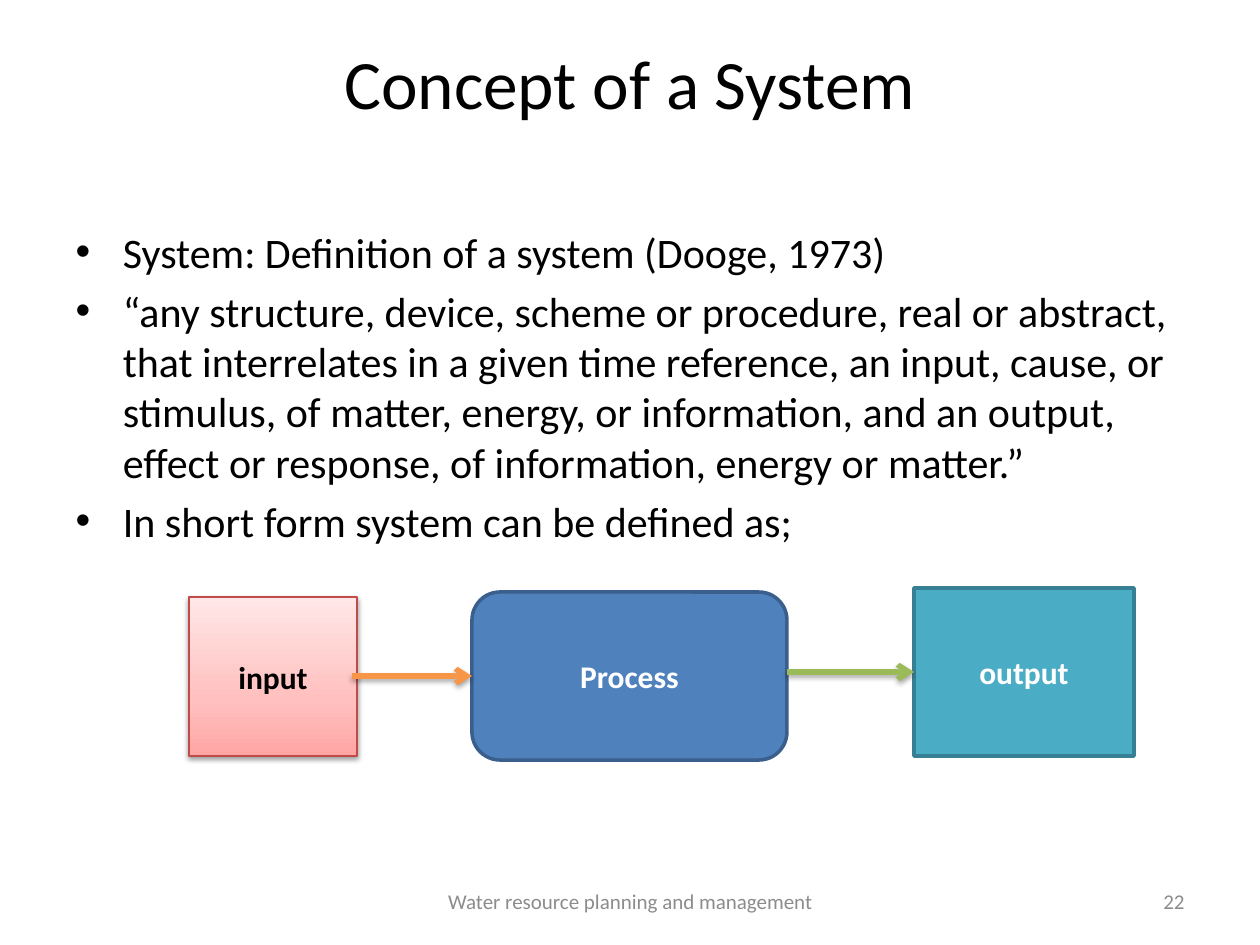
"""Build the slide that defines a system and shows input, process and output."""
from copy import deepcopy
from dataclasses import dataclass
from typing import NamedTuple, Optional

from lxml import etree
from pptx import Presentation
from pptx import util as u
from pptx.dml.color import RGBColor
from pptx.enum import shapes, text
from pptx.oxml import ns

EMU_PER_PX = 914400 / 126


@dataclass(frozen=True)
class Theme:
    font: str = "Calibri"
    ink: str = "000000"
    paper: str = "FFFFFF"
    muted: str = "8C8C8C"
    title_size: float = 39.6
    body_size: float = 24
    label_size: float = 18
    footer_size: float = 12
    edge_width: float = 2
    arrow_width: float = 3


class Area(NamedTuple):
    left: int
    top: int
    width: int
    height: int


class Stop(NamedTuple):
    position: float
    color: str


class Shadow(NamedTuple):
    opacity: int
    blur: float
    distance: float


@dataclass(frozen=True)
class Block:
    label: str
    area: Area
    fills: tuple[Stop, ...]
    edge: str
    ink: str = Theme.paper
    edge_width: float = Theme.edge_width
    kind: shapes.MSO_SHAPE = shapes.MSO_SHAPE.RECTANGLE
    shadow: Optional[Shadow] = None


class Arrow(NamedTuple):
    start: tuple[int, int]
    target: str
    color: str


THEME = Theme()
ARROW_SHADOW = Shadow(35, 3.1, 1.8)
TITLE_AREA = Area(63, 38, 1134, 88)
BODY_AREA = Area(63, 220, 1134, 662)
FOOTER_AREA = Area(431, 876, 399, 50)
NUMBER_AREA = Area(903, 876, 294, 50)
POINTS = [
    "System: Definition of a system (Dooge, 1973)",
    "“any structure, device, scheme or procedure, real or abstract, that interrelates "
    "in a given time reference, an input, cause, or stimulus, of matter, energy, or "
    "information, and an output, effect or response, of information, energy or matter.”",
    "In short form system can be defined as;",
]
BLOCKS = [
    Block("Process", Area(472, 592, 315, 168), (Stop(0, "4F81BD"),), "3A5F8C",
          kind=shapes.MSO_SHAPE.ROUNDED_RECTANGLE),
    Block("input", Area(189, 597, 168, 159),
          (Stop(0, "FFA6A5"), Stop(0.35, "FFC0BF"), Stop(1, "FFE7E7")), "BF4C48",
          ink=THEME.ink, edge_width=0.75, shadow=Shadow(38, 3.1, 1.6)),
    Block("output", Area(914, 588, 220, 168), (Stop(0, "4BACC6"),), "377F92"),
]
ARROWS = [
    Arrow((352, 676), "Process", "F79646"),
    Arrow((787, 672), "output", "9BBB59"),
]


def px(length: int) -> u.Emu:
    """Turn pixels into EMU."""
    return u.Emu(round(length * EMU_PER_PX))


def rgb(color: str) -> RGBColor:
    """Read a colour from its hex form."""
    return RGBColor.from_string(color)


def place(box, area: Area) -> None:
    """Move and size a box."""
    box.left, box.top, box.width, box.height = map(px, area)


def write(box, *lines: str, size: float, color: str = THEME.ink, bold: bool = False,
          align: text.PP_ALIGN = text.PP_ALIGN.CENTER,
          anchor: text.MSO_ANCHOR = text.MSO_ANCHOR.MIDDLE) -> None:
    """Fill a box with one formatted paragraph per line."""
    frame = box.text_frame
    frame.word_wrap = True
    frame.auto_size = text.MSO_AUTO_SIZE.NONE
    frame.vertical_anchor = anchor
    for index, line in enumerate(lines):
        para = frame.add_paragraph() if index else frame.paragraphs[0]
        para.alignment = align
        span = para.add_run()
        span.text = line
        span.font.name, span.font.size, span.font.bold = THEME.font, u.Pt(size), bold
        span.font.color.rgb = rgb(color)
    frame.paragraphs[0].space_before = u.Pt(0)


def add_shadow(effects, shadow: Shadow) -> None:
    """Add a downward black shadow to an effect list."""
    outer = etree.SubElement(
        effects, ns.qn("a:outerShdw"), blurRad=str(u.Pt(shadow.blur)),
        dist=str(u.Pt(shadow.distance)), dir="5400000", rotWithShape="0")
    tone = etree.SubElement(outer, ns.qn("a:srgbClr"), val=THEME.ink)
    etree.SubElement(tone, ns.qn("a:alpha"), val=str(shadow.opacity * 1000))


def paint(box, stops: tuple[Stop, ...]) -> None:
    """Fill a shape with one colour or with an upward gradient."""
    if len(stops) == 1:
        box.fill.solid()
        box.fill.fore_color.rgb = rgb(stops[0].color)
        return
    box.fill.gradient()
    box.fill.gradient_angle = 90
    stop_list = box._element.spPr.find(".//" + ns.qn("a:gsLst"))
    while len(stop_list) < len(stops):
        stop_list.append(deepcopy(stop_list[0]))
    for target, stop in zip(box.fill.gradient_stops, stops):
        target.position = stop.position
        target.color.rgb = rgb(stop.color)


def add_block(page, block: Block):
    """Draw a labelled block and return it."""
    box = page.shapes.add_shape(block.kind, *map(px, block.area))
    paint(box, block.fills)
    box.line.color.rgb = rgb(block.edge)
    box.line.width = u.Pt(block.edge_width)
    box.shadow.inherit = False
    if block.shadow:
        add_shadow(box._element.spPr.find(ns.qn("a:effectLst")), block.shadow)
    write(box, block.label, size=THEME.label_size, color=block.ink, bold=True)
    return box


def add_arrow(page, arrow: Arrow, target) -> None:
    """Draw an arrow that ends at the left side of a block."""
    start = tuple(map(px, arrow.start))
    link = page.shapes.add_connector(shapes.MSO_CONNECTOR.STRAIGHT, *start, *start)
    link.end_connect(target, 1)
    link.line.color.rgb = rgb(arrow.color)
    link.line.width = u.Pt(THEME.arrow_width)
    etree.SubElement(link.line._get_or_add_ln(), ns.qn("a:tailEnd"), type="arrow")
    effects = etree.SubElement(link._element.spPr, ns.qn("a:effectLst"))
    add_shadow(effects, ARROW_SHADOW)


def main() -> None:
    """Build and save the deck."""
    deck = Presentation()
    deck.slide_width, deck.slide_height = u.Inches(10), u.Inches(7.5)
    page = deck.slides.add_slide(deck.slide_layouts[1])
    title, body = page.placeholders
    place(title, TITLE_AREA)
    write(title, "Concept of a System", size=THEME.title_size)
    place(body, BODY_AREA)
    write(body, *POINTS, size=THEME.body_size, align=text.PP_ALIGN.LEFT,
          anchor=text.MSO_ANCHOR.TOP)
    boxes = {block.label: add_block(page, block) for block in BLOCKS}
    for arrow in ARROWS:
        add_arrow(page, arrow, boxes[arrow.target])
    for area, line, align in (
        (FOOTER_AREA, "Water resource planning and management", text.PP_ALIGN.CENTER),
        (NUMBER_AREA, "22", text.PP_ALIGN.RIGHT),
    ):
        box = page.shapes.add_textbox(*map(px, area))
        write(box, line, size=THEME.footer_size, color=THEME.muted, align=align)
    deck.save("out.pptx")


if __name__ == "__main__":
    main()
